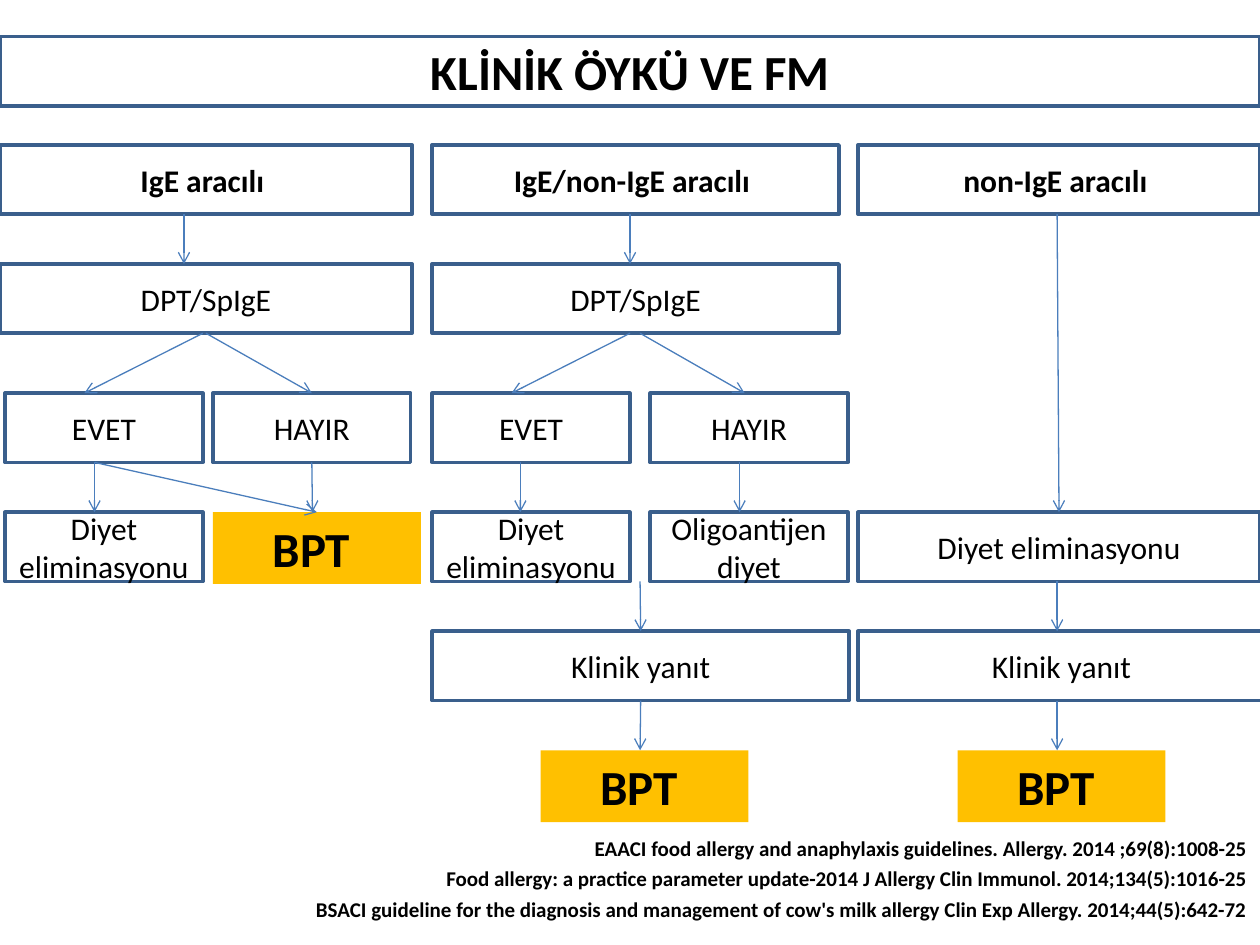
from dataclasses import dataclass

from lxml import etree
from pptx import Presentation, util as u
from pptx.dml.color import RGBColor
from pptx.enum import shapes, text
from pptx.oxml.ns import qn

WIDTH, HEIGHT = 10, 7.5
BOX_H, BPT_H = 0.55, 0.57
HALF_W, BPT_W = 1.57, 1.65
PITCH = 0.945  # distance between flow rows
ROWS = [1.15, 1.15 + PITCH] + [3.12 + PITCH * i for i in range(4)]
HEAD, TEST, ANSWER, DIET, RESPONSE, CHALLENGE = ROWS
IGE, MIXED, NON_IGE = 0, 3.43, 6.81  # left edges of the three columns
FONT, INK, BORDER, ARROW, AMBER = "Calibri", "000000", "3A5F8C", "4B7EBC", "FFC000"


@dataclass
class Box:
    label: str
    left: float
    top: float
    width: float
    bold: bool = False
    size: int = 18


@dataclass
class Arrow:
    start: str
    start_x: float
    end: str
    end_x: float


def bpt(left: float, top: float) -> Box:
    return Box("BPT ", left, top, BPT_W, True, 28)


BOXES = {
    "title": Box("KLİNİK ÖYKÜ VE FM", 0, 0.29, WIDTH, True, 28),
    # IgE mediated
    "ige": Box("IgE aracılı ", IGE, HEAD, 3.27, True),
    "ige test": Box("DPT/SpIgE", IGE, TEST, 3.27),
    "ige yes": Box("EVET", 0.04, ANSWER, HALF_W),
    "ige no": Box("HAYIR", 1.69, ANSWER, HALF_W),
    "ige diet": Box("Diyet eliminasyonu", 0.04, DIET, HALF_W),
    "ige bpt": bpt(1.69, DIET),
    # Mixed
    "mixed": Box("IgE/non-IgE aracılı ", MIXED, HEAD, 3.23, True),
    "mixed test": Box("DPT/SpIgE", MIXED, TEST, 3.23),
    "mixed yes": Box("EVET", MIXED, ANSWER, HALF_W),
    "mixed no": Box("HAYIR", 5.16, ANSWER, HALF_W),
    "mixed diet": Box("Diyet eliminasyonu", MIXED, DIET, HALF_W),
    "oligo diet": Box("Oligoantijen diyet", 5.16, DIET, HALF_W),
    "mixed response": Box("Klinik yanıt", MIXED, RESPONSE, 3.31),
    "mixed bpt": bpt(4.29, CHALLENGE),
    # Not IgE mediated
    "non": Box("non-IgE aracılı ", NON_IGE, HEAD, 3.19, True),
    "non diet": Box("Diyet eliminasyonu", NON_IGE, DIET, 3.19),
    "non response": Box("Klinik yanıt", NON_IGE, RESPONSE, 3.23),
    "non bpt": bpt(7.6, CHALLENGE),
}

ARROWS = [
    Arrow("ige", 1.46, "ige test", 1.46),
    Arrow("ige test", 1.61, "ige yes", 0.67),
    Arrow("ige test", 1.63, "ige no", 2.48),
    Arrow("ige yes", 0.75, "ige diet", 0.75),
    Arrow("ige no", 2.48, "ige bpt", 2.48),
    Arrow("ige yes", 0.75, "ige bpt", 2.52),
    Arrow("mixed", 5, "mixed test", 5),
    Arrow("mixed test", 5, "mixed yes", 4.06),
    Arrow("mixed test", 5.08, "mixed no", 5.91),
    Arrow("mixed yes", 4.13, "mixed diet", 4.13),
    Arrow("mixed no", 5.87, "oligo diet", 5.87),
    Arrow("oligo diet", 5.08, "mixed response", 5.08),
    Arrow("mixed response", 5.08, "mixed bpt", 5.08),
    Arrow("non", 8.39, "non diet", 8.41),
    Arrow("non diet", 8.39, "non response", 8.39),
    Arrow("non response", 8.39, "non bpt", 8.39),
]

# Citation, left edge, top; each box runs to the right edge of the slide
REFERENCES = [
    ("EAACI food allergy and anaphylaxis guidelines. Allergy. 2014 ;69(8):1008-25",
     0.67, 6.58),
    ("Food allergy: a practice parameter update-2014 J Allergy Clin Immunol. "
     "2014;134(5):1016-25", 0.87, 6.82),
    ("BSACI guideline for the diagnosis and management of cow's milk allergy "
     "Clin Exp Allergy. 2014;44(5):642-72", 2.24, 7.07),
]


def color(value: str) -> RGBColor:
    return RGBColor.from_string(value)


def write(frame, words: str, size: int, bold: bool, align) -> None:
    frame.word_wrap = True
    paragraph = frame.paragraphs[0]
    paragraph.alignment = align
    run = paragraph.add_run()
    run.text = words
    run.font.name, run.font.size, run.font.bold = FONT, u.Pt(size), bold
    run.font.color.rgb = color(INK)


def draw_box(slide, box: Box):
    is_bpt = box.label == "BPT "
    rect = slide.shapes.add_shape(
        shapes.MSO_SHAPE.RECTANGLE, u.Inches(box.left), u.Inches(box.top),
        u.Inches(box.width), u.Inches(BPT_H if is_bpt else BOX_H))
    rect.shadow.inherit = False
    frame = rect.text_frame
    if is_bpt:
        rect.fill.solid()
        rect.fill.fore_color.rgb = color(AMBER)
        rect.line.fill.background()
        frame.vertical_anchor = text.MSO_ANCHOR.TOP
        frame.auto_size = text.MSO_AUTO_SIZE.SHAPE_TO_FIT_TEXT
    else:
        rect.fill.background()
        rect.line.color.rgb = color(BORDER)
        rect.line.width = u.Pt(2)
        frame.vertical_anchor = text.MSO_ANCHOR.MIDDLE
    write(frame, box.label, box.size, box.bold, text.PP_ALIGN.CENTER)
    return rect


def at_middle(box: Box, x: float) -> bool:
    return abs(box.left + box.width / 2 - x) < 0.01


def draw_arrow(slide, arrow: Arrow, drawn: dict) -> None:
    """Run from the bottom of one box to the top of another."""
    start, end = BOXES[arrow.start], BOXES[arrow.end]
    line = slide.shapes.add_connector(
        shapes.MSO_CONNECTOR.STRAIGHT,
        u.Inches(arrow.start_x), u.Inches(start.top + BOX_H),
        u.Inches(arrow.end_x), u.Inches(end.top))
    if at_middle(start, arrow.start_x):
        line.begin_connect(drawn[arrow.start], 2)
    if at_middle(end, arrow.end_x):
        line.end_connect(drawn[arrow.end], 0)
    line.line.color.rgb = color(ARROW)
    line.line.width = u.Pt(0.75)
    outline = line.line._get_or_add_ln()
    etree.SubElement(outline, qn("a:tailEnd"), type="arrow")
    etree.SubElement(line._element.spPr, qn("a:effectLst"))


def draw_reference(slide, citation: str, left: float, top: float) -> None:
    note = slide.shapes.add_textbox(
        u.Inches(left), u.Inches(top), u.Inches(WIDTH - left), u.Inches(0.3))
    note.text_frame.auto_size = text.MSO_AUTO_SIZE.SHAPE_TO_FIT_TEXT
    write(note.text_frame, citation, 12, True, text.PP_ALIGN.RIGHT)


def main() -> None:
    deck = Presentation()
    deck.slide_width, deck.slide_height = u.Inches(WIDTH), u.Inches(HEIGHT)
    slide = deck.slides.add_slide(deck.slide_layouts[6])
    drawn = {key: draw_box(slide, box) for key, box in BOXES.items()}
    for arrow in ARROWS:
        draw_arrow(slide, arrow, drawn)
    for reference in REFERENCES:
        draw_reference(slide, *reference)
    deck.save("out.pptx")


if __name__ == "__main__":
    main()
